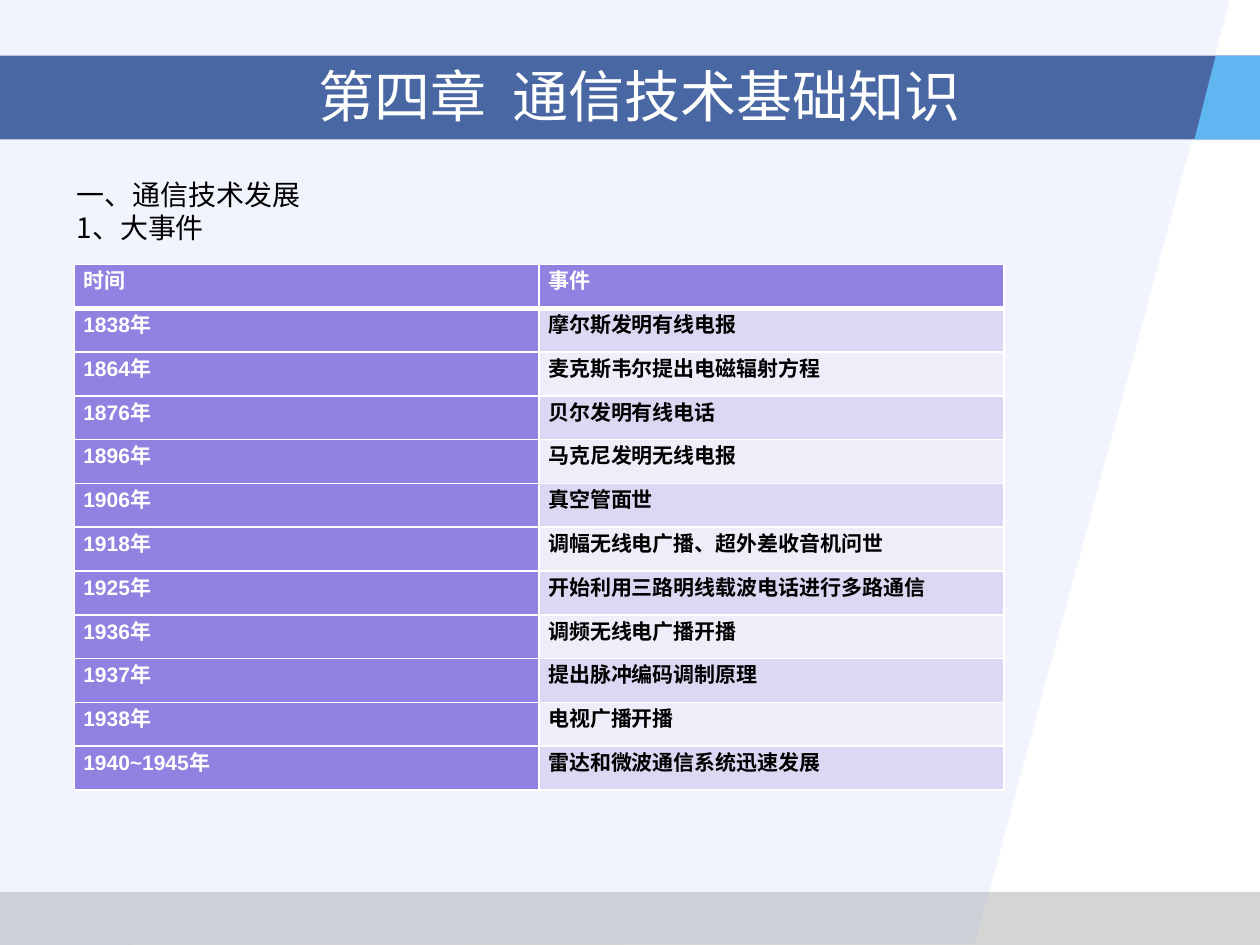
from dataclasses import dataclass

from lxml.etree import SubElement
from pptx import Presentation
from pptx.dml.color import RGBColor
from pptx.enum.shapes import MSO_SHAPE
from pptx.enum.text import MSO_ANCHOR, PP_ALIGN
from pptx.oxml.ns import qn
from pptx.util import Cm, Pt


@dataclass(frozen=True)
class Theme:
    white: str = "FFFFFF"
    black: str = "000000"
    wash: str = "94B1EC"
    band: str = "173D89"
    accent: str = "5FB6F1"
    footer: str = "969696"
    head: str = "9181E1"
    stripes: tuple = ("DCD8F4", "EEEDF9")
    title_font: str = "Times New Roman"
    body_font: str = "Noto Sans CJK SC"
    table_font: str = "Arial"
    title_size: int = 32
    body_size: int = 16
    table_size: int = 12


EVENTS = [
    ("时间", "事件"),
    ("1838年", "摩尔斯发明有线电报"),
    ("1864年", "麦克斯韦尔提出电磁辐射方程"),
    ("1876年", "贝尔发明有线电话"),
    ("1896年", "马克尼发明无线电报"),
    ("1906年", "真空管面世"),
    ("1918年", "调幅无线电广播、超外差收音机问世"),
    ("1925年", "开始利用三路明线载波电话进行多路通信"),
    ("1936年", "调频无线电广播开播"),
    ("1937年", "提出脉冲编码调制原理"),
    ("1938年", "电视广播开播"),
    ("1940~1945年", "雷达和微波通信系统迅速发展"),
]


class SlideBuilder:
    def __init__(self, s, theme):
        self.s = s
        self.theme = theme

    def paint(self, sp, color, alpha=100):
        sp.shadow.inherit = False
        sp.line.fill.background()
        sp.fill.solid()
        sp.fill.fore_color.rgb = RGBColor.from_string(color)
        if alpha < 100:
            clr = sp.fill._xPr.find(".//" + qn("a:srgbClr"))
            SubElement(clr, qn("a:alpha"), val=str(alpha * 1000))

    def rect(self, x, y, w, h, color, alpha=100):
        sp = self.s.shapes.add_shape(MSO_SHAPE.RECTANGLE, Cm(x), Cm(y), Cm(w), Cm(h))
        self.paint(sp, color, alpha)

    def polygon(self, points, color, alpha=100):
        pts = [(Cm(x), Cm(y)) for x, y in points]
        fb = self.s.shapes.build_freeform(*pts[0])
        fb.add_line_segments(pts[1:], close=True)
        self.paint(fb.convert_to_shape(), color, alpha)

    def run(self, p, text, font, size, color, bold=False):
        r = p.add_run()
        r.text = text
        r.font.name = font
        r.font.size = Pt(size)
        r.font.bold = bold
        r.font.color.rgb = RGBColor.from_string(color)
        SubElement(r.font._element, qn("a:ea"), typeface=self.theme.body_font)

    def text(self, x, y, w, h, lines, font, size, color, align=PP_ALIGN.LEFT,
             anchor=MSO_ANCHOR.TOP, spacing=1.0, before=0):
        tf = self.s.shapes.add_textbox(Cm(x), Cm(y), Cm(w), Cm(h)).text_frame
        tf.word_wrap = True
        tf.vertical_anchor = anchor
        for i, line in enumerate(lines):
            p = tf.add_paragraph() if i else tf.paragraphs[0]
            p.alignment = align
            p.line_spacing = spacing
            p.space_before = Pt(before if i else 0)
            self.run(p, line, font, size, color)

    def borders(self, cell, bottom):
        tcPr = cell._tc.get_or_add_tcPr()
        widths = {"a:lnL": 1, "a:lnR": 1, "a:lnT": 1, "a:lnB": bottom}
        for i, (tag, width) in enumerate(widths.items()):
            ln = tcPr.makeelement(qn(tag), {"w": str(Pt(width))})
            fill = SubElement(ln, qn("a:solidFill"))
            SubElement(fill, qn("a:srgbClr"), val=self.theme.white)
            tcPr.insert(i, ln)

    def table(self, x, y, w, h, rows):
        t = self.theme
        tbl = self.s.shapes.add_table(len(rows), len(rows[0]),
                                      Cm(x), Cm(y), Cm(w), Cm(h)).table
        for i, values in enumerate(rows):
            for j, value in enumerate(values):
                heading = i == 0 or j == 0
                cell = tbl.cell(i, j)
                cell.margin_left = cell.margin_right = Cm(0.18)
                cell.margin_top = cell.margin_bottom = 0
                cell.fill.solid()
                cell.fill.fore_color.rgb = RGBColor.from_string(
                    t.head if heading else t.stripes[(i - 1) % 2])
                self.borders(cell, bottom=1 if i else 3)
                p = cell.text_frame.paragraphs[0]
                p.alignment = PP_ALIGN.JUSTIFY
                self.run(p, value, t.table_font, t.table_size,
                         t.white if heading else t.black, bold=True)


def main():
    prs = Presentation()
    prs.slide_width, prs.slide_height = Cm(25.4), Cm(19.05)
    t = Theme()
    b = SlideBuilder(prs.slides.add_slide(prs.slide_layouts[6]), t)

    # Background: footer strip, slanted wash, title band and its accent
    b.rect(0, 17.98, 25.4, 1.07, t.footer, 40)
    b.polygon([(0, 0), (24.79, 0), (19.66, 19.02), (0, 19.05)], t.wash, 13)
    b.rect(0, 1.12, 25.4, 1.69, t.band, 77)
    b.polygon([(24.51, 1.12), (24.08, 2.81), (25.4, 2.81), (25.4, 1.12)], t.accent)

    # Title and section headings
    b.text(1.47, 1.14, 22.86, 1.57, ["第四章  通信技术基础知识"], t.title_font,
           t.title_size, t.white, PP_ALIGN.CENTER, MSO_ANCHOR.MIDDLE)
    b.text(1.3, 3.53, 22.86, 14.58, ["一、通信技术发展", "1、大事件"], t.body_font,
           t.body_size, t.black, spacing=0.9, before=1.5)

    # Timeline of events
    b.table(1.5, 5.33, 18.74, 10.6, EVENTS)

    prs.save("out.pptx")


if __name__ == "__main__":
    main()
